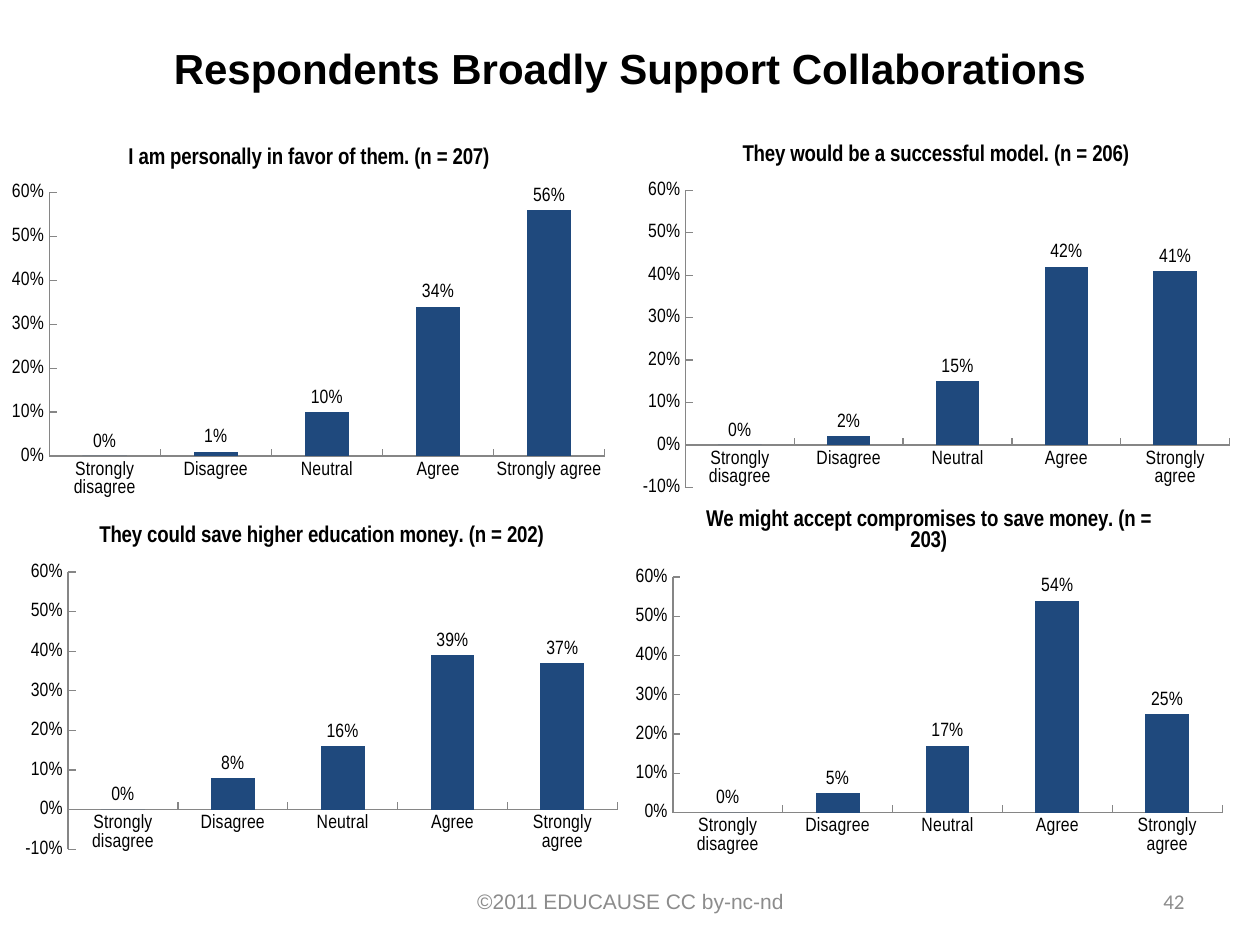
from lxml import etree
from pptx import Presentation
from pptx.chart.data import CategoryChartData
from pptx.dml.color import RGBColor
from pptx.enum.chart import XL_CHART_TYPE as ChartType
from pptx.enum.chart import XL_LABEL_POSITION as LabelPosition
from pptx.enum.chart import XL_TICK_MARK as TickMark
from pptx.enum.text import MSO_ANCHOR as Anchor
from pptx.enum.text import PP_ALIGN as Align
from pptx.oxml.ns import qn
from pptx.util import Inches, Pt

BLUE, GREY, AXIS_GREY, BLACK = "1F497D", "8C8C8C", "868686", "000000"
CATEGORIES = ["Strongly disagree", "Disagree", "Neutral", "Agree", "Strongly agree"]


def format_font(font, size, name="Arial", color=BLACK, bold=False):
    font.size, font.name, font.bold = Pt(size), name, bold
    font.color.rgb = RGBColor.from_string(color)


def write_text(text_frame, text, align=Align.CENTER, **font_format):
    text_frame.text = text
    text_frame.word_wrap = True
    text_frame.vertical_anchor = Anchor.MIDDLE
    paragraph = text_frame.paragraphs[0]
    paragraph.alignment = align
    format_font(paragraph.runs[0].font, **font_format)


presentation = Presentation()
presentation.slide_width, presentation.slide_height = Inches(10), Inches(7.5)
slide = presentation.slides.add_slide(presentation.slide_layouts[5])

title = slide.shapes.title
title.left, title.top = Inches(0.5), Inches(0.12)
title.width, title.height = Inches(9), Inches(0.84)
write_text(title.text_frame, "Respondents Broadly Support Collaborations", size=24, bold=True)

footer = slide.shapes.add_textbox(Inches(3.42), Inches(6.95), Inches(3.17), Inches(0.4))
write_text(footer.text_frame, "©2011 EDUCAUSE CC by-nc-nd", size=12, color=GREY)
page_number = slide.shapes.add_textbox(Inches(7.17), Inches(6.95), Inches(2.33), Inches(0.4))
write_text(page_number.text_frame, "42", align=Align.RIGHT, size=12, name="Calibri", color=GREY)

# Title, values, axis minimum, chart box and plot box (left, top, width, height)
charts = [
    ("I am personally in favor of them. (n = 207)", [0, 0.01, 0.1, 0.34, 0.56], 0,
     (0, 1.01, 4.9, 3), (0.39, 1.53, 4.41, 2.09)),
    ("They would be a successful model. (n = 206)", [0, 0.02, 0.15, 0.42, 0.41], -0.1,
     (5, 0.99, 4.85, 3.01), (5.44, 1.51, 4.32, 2.36)),
    ("They could save higher education money. (n = 202)", [0, 0.08, 0.16, 0.39, 0.37], -0.1,
     (0.1, 4.02, 4.9, 2.84), (0.54, 4.54, 4.36, 2.2)),
    ("We might accept compromises to save money. (n = 203)", [0, 0.05, 0.17, 0.54, 0.25], 0,
     (4.95, 3.89, 4.84, 2.96), (5.34, 4.58, 4.36, 1.87)),
]

for heading, values, minimum, box, plot_box in charts:
    data = CategoryChartData(number_format="0%")
    data.categories = CATEGORIES
    data.add_series("Series 1", values)
    chart = slide.shapes.add_chart(
        ChartType.COLUMN_CLUSTERED, *[Inches(length) for length in box], data).chart
    format_font(chart.font, 11, "Arial Narrow")
    chart.has_legend = False
    chart.has_title = True
    write_text(chart.chart_title.text_frame, heading, size=13, name="Arial Narrow", bold=True)

    value_axis = chart.value_axis
    value_axis.minimum_scale, value_axis.maximum_scale = minimum, 0.6
    value_axis.major_unit = 0.1
    value_axis.has_major_gridlines = False
    value_axis.tick_labels.number_format = "0%"
    value_axis.tick_labels.number_format_is_linked = False
    for axis in (chart.category_axis, value_axis):
        axis.major_tick_mark = TickMark.INSIDE
        axis.minor_tick_mark = TickMark.NONE
        axis.format.line.color.rgb = RGBColor.from_string(AXIS_GREY)
        axis.format.line.width = Pt(0.75)

    plot = chart.plots[0]
    plot.gap_width = 150
    plot.vary_by_categories = False
    fill = plot.series[0].format.fill
    fill.solid()
    fill.fore_color.rgb = RGBColor.from_string(BLUE)
    plot.has_data_labels = True
    labels = plot.data_labels
    labels.show_value = True
    labels.number_format = "0%"
    labels.number_format_is_linked = False
    labels.position = LabelPosition.OUTSIDE_END
    format_font(labels.font, 11, "Arial Narrow")

    # Fix the inner plot area as fractions of the chart box
    left, top, width, height = box
    plot_left, plot_top, plot_width, plot_height = plot_box
    plot_area = chart._chartSpace.find(".//" + qn("c:plotArea"))
    for old_layout in plot_area.findall(qn("c:layout")):
        plot_area.remove(old_layout)
    layout = etree.Element(qn("c:layout"))
    plot_area.insert(0, layout)
    manual = etree.SubElement(layout, qn("c:manualLayout"))
    settings = [("layoutTarget", "inner"), ("xMode", "edge"), ("yMode", "edge"),
                ("x", (plot_left - left) / width), ("y", (plot_top - top) / height),
                ("w", plot_width / width), ("h", plot_height / height)]
    for tag, value in settings:
        etree.SubElement(manual, qn(f"c:{tag}")).set("val", str(value))

presentation.save("out.pptx")
